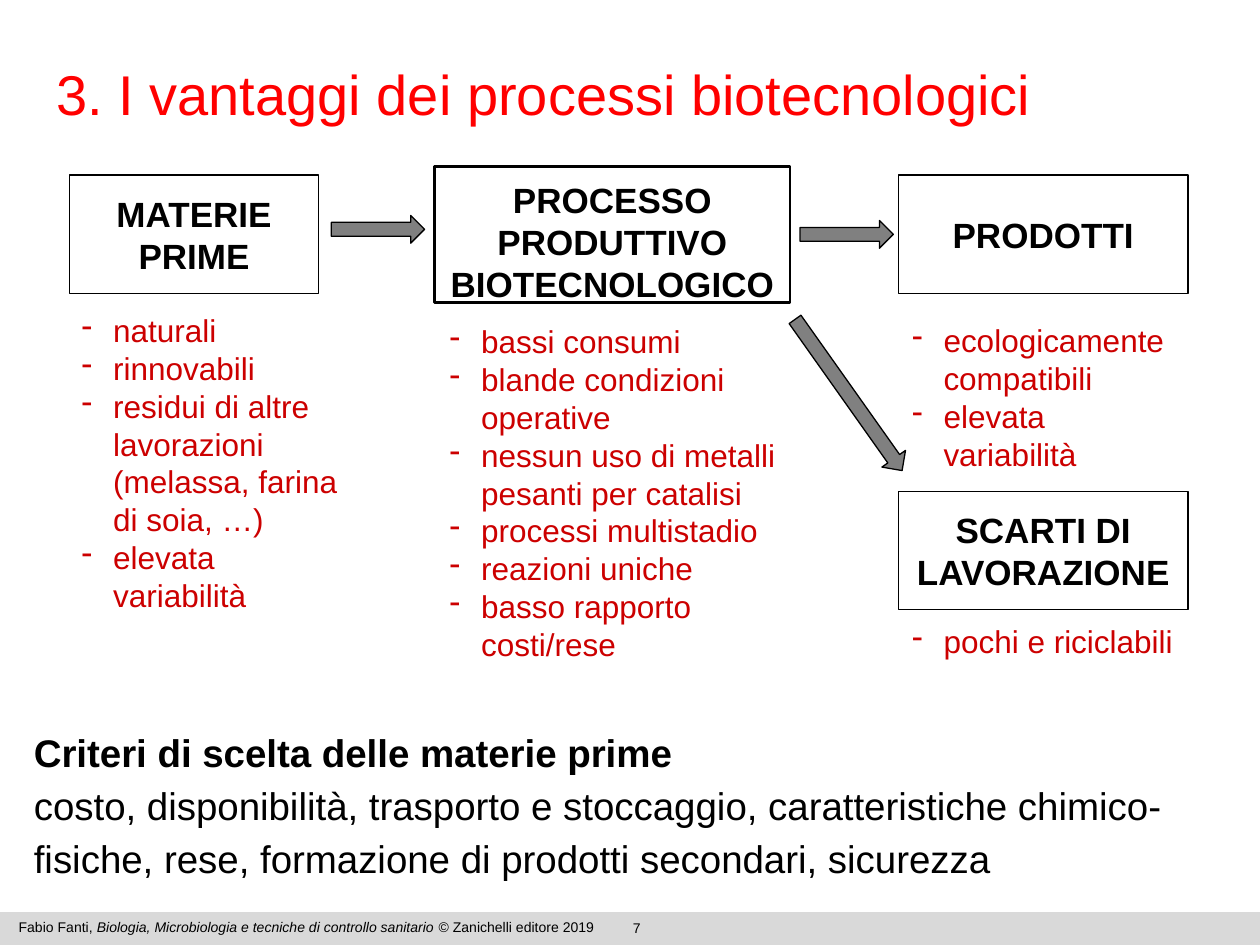
from dataclasses import dataclass
from typing import NamedTuple, Optional

import pptx
import pptx.dml.color
import pptx.enum.shapes
import pptx.enum.text
import pptx.oxml.ns
import pptx.util
from lxml import etree

Align = pptx.enum.text.PP_ALIGN
Anchor = pptx.enum.text.MSO_ANCHOR
Preset = pptx.enum.shapes.MSO_SHAPE

COLUMNS, ROWS = 100, 75
SLIDE_WIDTH, SLIDE_HEIGHT = pptx.util.Inches(10), pptx.util.Inches(7.5)


@dataclass(frozen=True)
class Theme:
    font: str = "Arial"
    black: str = "000000"
    white: str = "FFFFFF"
    title: str = "FF0000"
    traits: str = "CC0000"
    arrow: str = "808080"
    footer: str = "D9D9D9"
    title_size: int = 32
    criteria_size: int = 22
    stage_size: int = 20
    trait_size: int = 18
    footer_size: int = 8
    thin: float = 0.75
    thick: float = 1.5


THEME = Theme()


class Area(NamedTuple):
    """Left, top, width and height in grid columns and rows."""
    column: float
    row: float
    columns: float
    rows: float


class Run(NamedTuple):
    text: str
    bold: bool = False
    italic: bool = False


class Stage(NamedTuple):
    name: str
    box: Area
    traits: list[str]
    traits_area: Area
    line_width: float = THEME.thin
    anchor: Anchor = Anchor.MIDDLE


class Arrow(NamedTuple):
    area: Area
    rotation: float = 0


STAGES = [
    Stage("PROCESSO PRODUTTIVO BIOTECNOLOGICO", Area(34.5, 13.2, 28.2, 10.8),
          ["bassi consumi", "blande condizioni operative",
           "nessun uso di metalli pesanti per catalisi",
           "processi multistadio", "reazioni uniche", "basso rapporto costi/rese"],
          Area(34.7, 24.6, 28.5, 25.7), THEME.thick, Anchor.TOP),
    Stage("MATERIE PRIME", Area(5.5, 13.9, 19.8, 9.4),
          ["naturali", "rinnovabili",
           "residui di altre lavorazioni (melassa, farina di soia, …)",
           "elevata variabilità"],
          Area(5.5, 23.7, 23, 17.7)),
    Stage("PRODOTTI", Area(71.3, 13.9, 23, 9.4),
          ["ecologicamente compatibili", "elevata variabilità"],
          Area(71.4, 24.5, 23, 9.7)),
    Stage("SCARTI DI LAVORAZIONE", Area(71.3, 39, 23, 9.4),
          ["pochi e riciclabili"], Area(71.4, 48.4, 23, 4.8)),
]

ARROWS = [
    Arrow(Area(26.3, 17.1, 7.4, 2.2)),
    Arrow(Area(63.5, 17.5, 7.4, 2.2)),
    Arrow(Area(60, 30.2, 14.7, 2.3), 54.7),
]

CRITERIA = [
    [Run("Criteri di scelta delle materie prime", bold=True)],
    [Run("costo, disponibilità, trasporto e stoccaggio, caratteristiche "
         "chimico-fisiche, rese, formazione di prodotti secondari, sicurezza")],
]

CREDIT = [
    Run("Fabio Fanti, "),
    Run("Biologia, Microbiologia e tecniche di controllo sanitario", italic=True),
    Run(" © Zanichelli editore 2019"),
]


def place(area: Area) -> tuple[int, int, int, int]:
    """Turn grid units into slide lengths."""
    return (round(SLIDE_WIDTH * area.column / COLUMNS),
            round(SLIDE_HEIGHT * area.row / ROWS),
            round(SLIDE_WIDTH * area.columns / COLUMNS),
            round(SLIDE_HEIGHT * area.rows / ROWS))


def rgb(color: str) -> pptx.dml.color.RGBColor:
    return pptx.dml.color.RGBColor.from_string(color)


def add_preset(slide, preset: Preset, area: Area, fill: Optional[str] = None,
               line: Optional[str] = None, line_width: float = THEME.thin):
    shape = slide.shapes.add_shape(preset, *place(area))
    shape.shadow.inherit = False
    if fill:
        shape.fill.solid()
        shape.fill.fore_color.rgb = rgb(fill)
    else:
        shape.fill.background()
    if line:
        shape.line.color.rgb = rgb(line)
        shape.line.width = pptx.util.Pt(line_width)
    else:
        shape.line.fill.background()
    return shape


def add_dash(paragraph, color: str) -> None:
    """Give the paragraph a hanging dash bullet."""
    properties = paragraph._p.get_or_add_pPr()
    properties.set("marL", str(pptx.util.Inches(0.25)))
    properties.set("indent", str(pptx.util.Inches(-0.31)))
    qn = pptx.oxml.ns.qn
    bullet_color = etree.SubElement(properties, qn("a:buClr"))
    etree.SubElement(bullet_color, qn("a:srgbClr"), val=color)
    etree.SubElement(properties, qn("a:buChar"), char="-")


def write(shape, paragraphs: list[list[Run]], size: float, color: str,
          align: Align = Align.LEFT, anchor: Anchor = Anchor.TOP,
          inset: float = 0.1, spacing: Optional[float] = None,
          dashes: bool = False) -> None:
    frame = shape.text_frame
    frame.word_wrap = True
    frame.vertical_anchor = anchor
    frame.margin_left = frame.margin_right = pptx.util.Inches(0.1)
    frame.margin_top = frame.margin_bottom = pptx.util.Inches(inset)
    for index, runs in enumerate(paragraphs):
        paragraph = frame.add_paragraph() if index else frame.paragraphs[0]
        paragraph.alignment = align
        if spacing:
            paragraph.line_spacing = spacing
        if dashes:
            add_dash(paragraph, color)
        for part in runs:
            run = paragraph.add_run()
            run.text = part.text
            run.font.name = THEME.font
            run.font.size = pptx.util.Pt(size)
            run.font.bold = part.bold
            run.font.italic = part.italic
            run.font.color.rgb = rgb(color)


def add_text(slide, area: Area, *args, **kwargs) -> None:
    write(slide.shapes.add_textbox(*place(area)), *args, **kwargs)


def add_footer(slide) -> None:
    add_preset(slide, Preset.RECTANGLE, Area(0, 72.4, COLUMNS, 2.6), THEME.footer)
    add_text(slide, Area(39.4, 72.5, 22.3, 1.7), [[Run("7")]],
             THEME.footer_size, THEME.black, Align.CENTER, inset=0.05)
    add_text(slide, Area(0.5, 72.4, 50.4, 2.4), [CREDIT],
             THEME.footer_size, THEME.black, inset=0.05)


def add_stage(slide, stage: Stage) -> None:
    box = add_preset(slide, Preset.RECTANGLE, stage.box,
                     line=THEME.black, line_width=stage.line_width)
    write(box, [[Run(stage.name, bold=True)]], THEME.stage_size, THEME.black,
          Align.CENTER, stage.anchor)
    add_text(slide, stage.traits_area, [[Run(trait)] for trait in stage.traits],
             THEME.trait_size, THEME.traits, dashes=True)


def main() -> None:
    deck = pptx.Presentation()
    deck.slide_width, deck.slide_height = SLIDE_WIDTH, SLIDE_HEIGHT
    slide = deck.slides.add_slide(deck.slide_layouts[6])

    add_footer(slide)
    title = add_preset(slide, Preset.RECTANGLE, Area(3.5, 4.2, 96.5, 9.7),
                       THEME.white, THEME.white)
    write(title, [[Run("3. I vantaggi dei processi biotecnologici")]],
          THEME.title_size, THEME.title, inset=0.05)
    for stage in STAGES:
        add_stage(slide, stage)
    for arrow in ARROWS:
        add_preset(slide, Preset.RIGHT_ARROW, arrow.area, THEME.arrow,
                   THEME.black).rotation = arrow.rotation
    add_text(slide, Area(1.7, 56.3, 96.5, 15.1), CRITERIA,
             THEME.criteria_size, THEME.black, spacing=1.15)
    deck.save("out.pptx")


if __name__ == "__main__":
    main()
